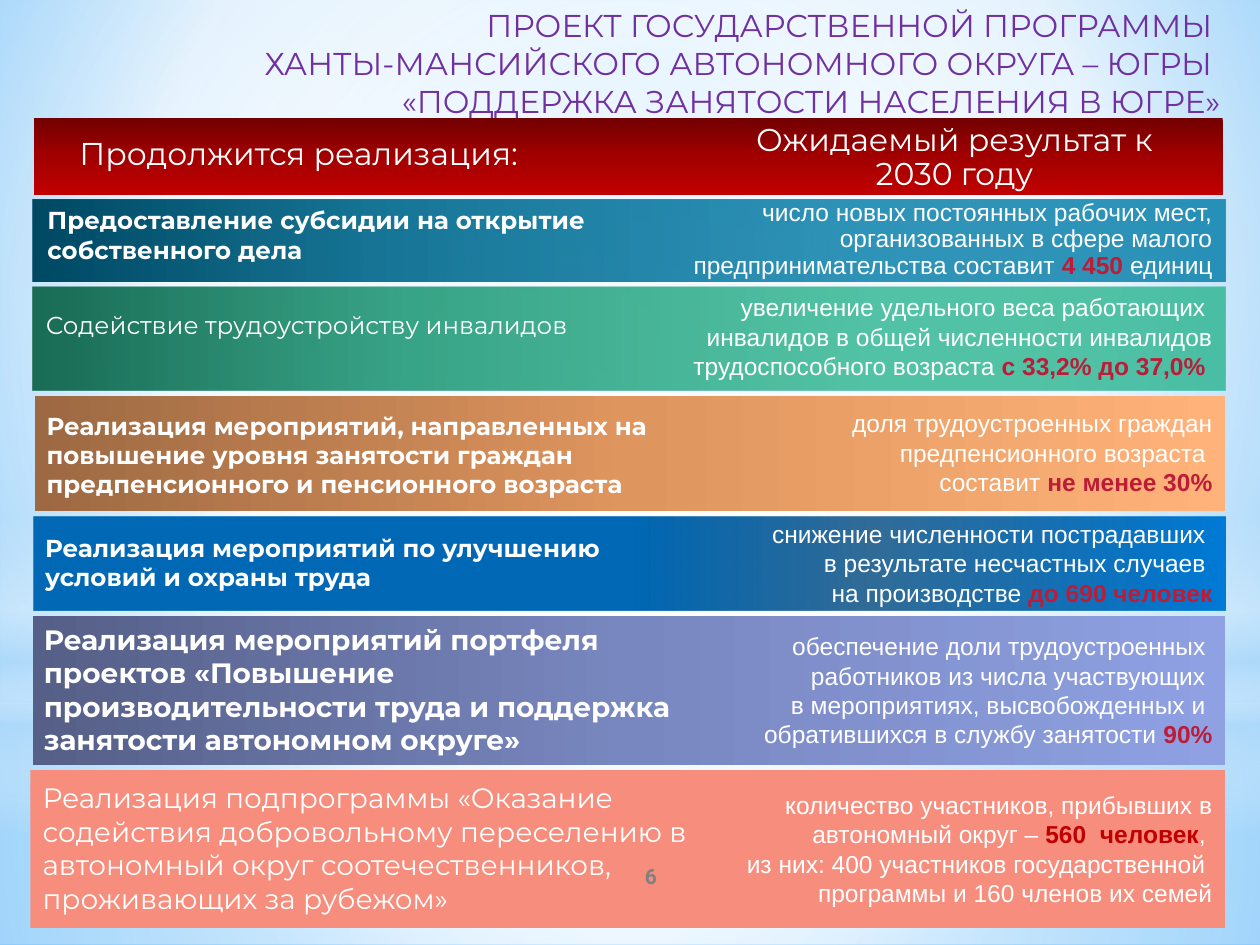
import pptx
import pptx.dml.color
import pptx.enum.shapes
import pptx.enum.text
import pptx.oxml
import pptx.oxml.ns
import pptx.util

Pt = pptx.util.Pt
ALIGN = pptx.enum.text.PP_ALIGN
SHAPES = pptx.enum.shapes.MSO_SHAPE
WHITE, RED, DARK_RED = "FFFFFF", "BC1C37", "C00000"
SKY = "B4DCFA"
CENTER = (50, 50, 50, 50)
BAND_RIGHT = 700.3
RESULT_LEFT, RESULT_WIDTH = 385.5, 314.5

BACKGROUND = [(0, "9ED5FF"), (60, WHITE), (100, "5BB9FF")]
GLOWS = [
    (SHAPES.RECTANGLE, (0, 402, 720, 138), [(0, WHITE, 91), (37, WHITE, 76), (100, SKY, 79)], CENTER),
    (SHAPES.RECTANGLE, (0, 0, 720, 402), [(0, WHITE, 89), (48, WHITE, 62), (100, SKY, 79)], CENTER),
    (SHAPES.RECTANGLE, (0, 297, 720, 180),
     [(0, WHITE, 0), (29, WHITE, 30), (45, SKY, 40), (55, WHITE, 26), (65, SKY, 60), (100, WHITE, 0)], 90),
    (SHAPES.OVAL, (0, 126, 720, 402), [(0, WHITE), (56, WHITE, 0)], CENTER),
]
TITLE = [
    "ПРОЕКТ ГОСУДАРСТВЕННОЙ ПРОГРАММЫ ",
    "ХАНТЫ-МАНСИЙСКОГО АВТОНОМНОГО ОКРУГА – ЮГРЫ ",
    "«ПОДДЕРЖКА ЗАНЯТОСТИ НАСЕЛЕНИЯ В ЮГРЕ»",
]
HEADER_BAND = (19.4, 67.5, 679.3, 43.7)
HEADER_STOPS = [(0, "720000"), (50, "A20000"), (100, "C00000")]
HEADERS = [
    ("Продолжится реализация:", (26, 75.6, 289.4, 26.6)),
    ("Ожидаемый результат к 2030 году", (403.2, 67.7, 284.4, 46.8)),
]
ROWS = [
    dict(band=(18.9, 113.8, 46.8), stops=[(0, "004963"), (30, "01698D", 90), (70, "017CA8", 80)],
         measure="Предоставление субсидии на открытие собственного дела",
         measure_box=(20, 113.8, 343), size=14, bold=True, top=110.9, spacing=0.9,
         result=[[("число новых постоянных рабочих мест, организованных в сфере малого "
                   "предпринимательства составит ",), ("4 450 ", RED), ("единиц",)]]),
    dict(band=(18.4, 163.8, 59.4), stops=[(0, "1A6B55"), (30, "249979", 90), (70, "2BB58F", 80)],
         measure="Содействие трудоустройству инвалидов",
         measure_box=(19.2, 173.5, 343), size=14, bold=False, top=163.4,
         result=[[("увеличение удельного веса работающих ",)],
                 [("инвалидов в общей численности инвалидов трудоспособного возраста ",),
                  ("с 33,2% до 37,0% ", RED)]]),
    dict(band=(20, 226.5, 65.4), stops=[(0, "9D6942"), (50, "DF955E"), (100, "FFB37A")],
         measure="Реализация мероприятий, направленных на повышение уровня занятости граждан "
                 "предпенсионного и пенсионного возраста",
         measure_box=(19.6, 231.1, 405), size=14, bold=True, top=229.7,
         result=[[("доля трудоустроенных граждан предпенсионного возраста ",)],
                 [("составит ",), ("не менее 30%", RED)]]),
    dict(band=(19.4, 295, 53.8), stops=[(50, "0068B5"), (70, "00497F", 80), (100, "007BD7")],
         measure="Реализация мероприятий по улучшению условий и охраны труда",
         measure_box=(18.7, 301, 343), size=14, bold=True, top=293,
         result=[[("снижение численности пострадавших ",)],
                 [("в результате несчастных случаев ",)],
                 [("на производстве ",), ("до 690 человек", RED)]]),
    dict(band=(18.9, 352, 85), stops=[(0, "555F87"), (50, "7987C0"), (100, "8FA1E3")],
         measure="Реализация мероприятий портфеля проектов «Повышение производительности труда "
                 "и поддержка занятости автономном округе»",
         measure_box=(18, 352, 397.4), size=16, bold=True, top=357.1,
         result=[[("обеспечение доли трудоустроенных ",)],
                 [("работников из числа участвующих ",)],
                 [("в мероприятиях, высвобожденных и ",)],
                 [("обратившихся в службу занятости ",), ("90%", RED)]]),
    dict(band=(17.4, 440, 90.5), stops=[(0, "F78D7C"), (100, "F78D7C")],
         measure="Реализация подпрограммы «Оказание содействия добровольному переселению "
                 "в автономный округ соотечественников, проживающих за рубежом»",
         measure_box=(17.3, 442.6, 399.6), size=16, bold=False, top=447.8,
         result=[[("количество участников, прибывших в автономный округ – ",),
                  ("560  человек", DARK_RED), (", ",)],
                 [("из них: 400 участников государственной ",)],
                 [("программы и 160 членов их семей",)]]),
]


def gradient(fill_parent, placeholder_tag, stops, direction):
    parts = []
    for position, color, *opacity in stops:
        alpha = f'<a:alpha val="{opacity[0] * 1000}"/>' if opacity else ""
        parts.append(f'<a:gs pos="{position * 1000}"><a:srgbClr val="{color}">{alpha}</a:srgbClr></a:gs>')
    if isinstance(direction, tuple):
        sides = " ".join(f'{side}="{value * 1000}"' for side, value in zip("ltrb", direction))
        shade = f'<a:path path="circle"><a:fillToRect {sides}/></a:path>'
    else:
        shade = f'<a:lin ang="{direction * 60000}" scaled="0"/>'
    element = pptx.oxml.parse_xml(
        f'<a:gradFill {pptx.oxml.ns.nsdecls("a")} rotWithShape="1">'
        f'<a:gsLst>{"".join(parts)}</a:gsLst>{shade}</a:gradFill>')
    old_fill = fill_parent.find(".//" + pptx.oxml.ns.qn(placeholder_tag))
    old_fill.getparent().replace(old_fill, element)


def add_filled_shape(slide, kind, box, stops, direction):
    shape = slide.shapes.add_shape(kind, *map(Pt, box))
    shape.shadow.inherit = False
    shape.fill.solid()
    gradient(shape._element.spPr, "a:solidFill", stops, direction)
    shape.line.fill.background()


def write(shape, paragraphs, font, size, color=WHITE, bold=False, align=ALIGN.LEFT,
          spacing=1.0, anchor=pptx.enum.text.MSO_ANCHOR.TOP):
    frame = shape.text_frame
    frame.word_wrap = True
    frame.auto_size = pptx.enum.text.MSO_AUTO_SIZE.NONE
    frame.vertical_anchor = anchor
    for index, runs in enumerate(paragraphs):
        paragraph = frame.add_paragraph() if index else frame.paragraphs[0]
        paragraph.alignment = align
        paragraph.line_spacing = spacing
        for text, *highlight in runs:
            run = paragraph.add_run()
            run.text = text
            run.font.name = font
            run.font.size = Pt(size)
            run.font.bold = bold or bool(highlight)
            run.font.color.rgb = pptx.dml.color.RGBColor.from_string(highlight[0] if highlight else color)


def add_text(slide, box, *content, **style):
    write(slide.shapes.add_textbox(*map(Pt, box)), *content, **style)


def main():
    presentation = pptx.Presentation()
    presentation.slide_width, presentation.slide_height = Pt(720), Pt(540)
    slide = presentation.slides.add_slide(presentation.slide_layouts[5])
    slide.background.fill.solid()
    gradient(slide._element.cSld, "a:solidFill", BACKGROUND, (20, 10, 20, 60))
    for glow in GLOWS:
        add_filled_shape(slide, *glow)

    for row in ROWS:
        left, top, height = row["band"]
        add_filled_shape(slide, SHAPES.RECTANGLE, (left, top, BAND_RIGHT - left, height), row["stops"], 0)
    add_text(slide, (300, 486, 144, 28.8), [[("6",)]], "Roboto", 12, color="808080", bold=True,
             align=ALIGN.CENTER, anchor=pptx.enum.text.MSO_ANCHOR.MIDDLE)

    title = slide.shapes.title
    title.left, title.top, title.width, title.height = map(Pt, (37.4, 0, 667.4, 72.7))
    write(title, [[(line,)] for line in TITLE], "Montserrat", 18, color="7030A0", align=ALIGN.RIGHT)
    slide.shapes._spTree.append(title._element)

    add_filled_shape(slide, SHAPES.RECTANGLE, HEADER_BAND, HEADER_STOPS, 90)
    for text, box in HEADERS:
        add_text(slide, box, [[(text,)]], "Montserrat", 18, align=ALIGN.CENTER, spacing=0.9)
    for row in ROWS:
        height = row["band"][2]
        add_text(slide, (*row["measure_box"], height), [[(row["measure"],)]], "Montserrat",
                 row["size"], bold=row["bold"])
        add_text(slide, (RESULT_LEFT, row["top"], RESULT_WIDTH, height), row["result"], "Arial", 14,
                 align=ALIGN.RIGHT, spacing=row.get("spacing", 1.0))
    presentation.save("out.pptx")


if __name__ == "__main__":
    main()
